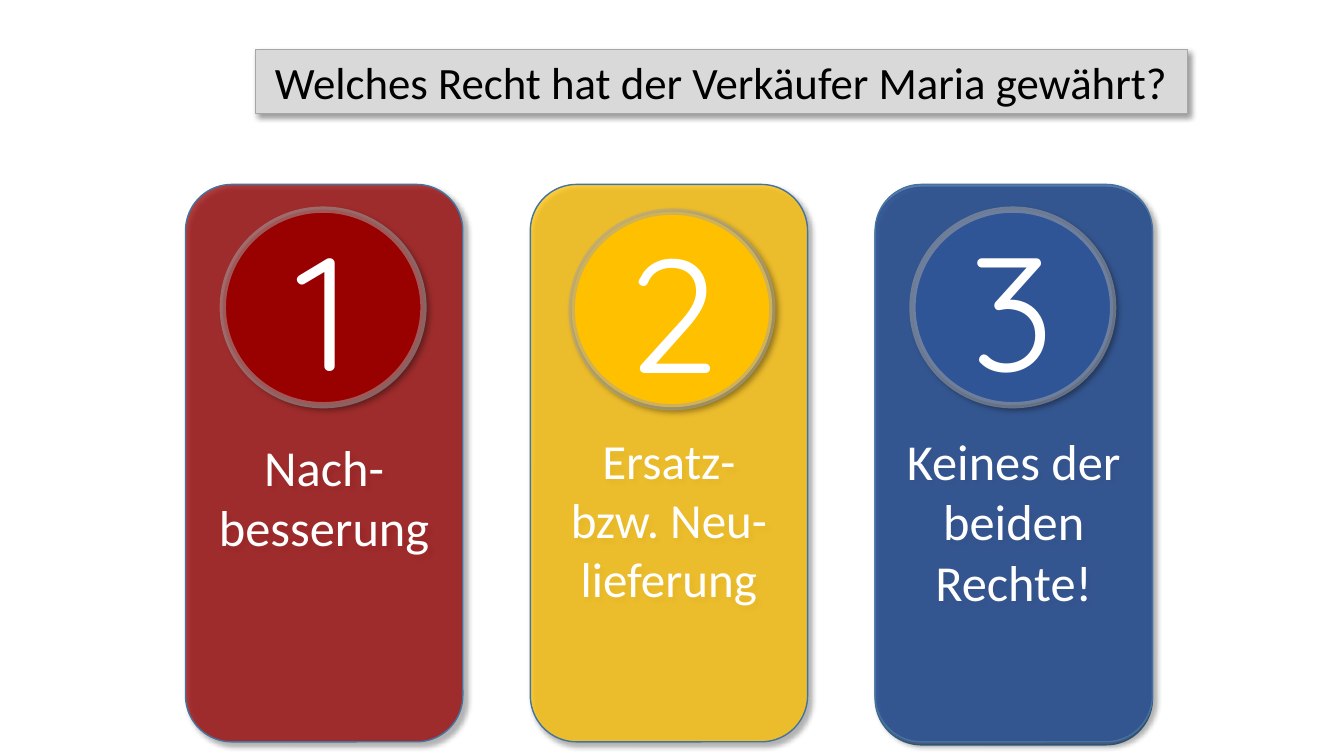
from dataclasses import dataclass

from lxml.etree import SubElement
from pptx import Presentation
from pptx.dml.color import RGBColor
from pptx.enum.shapes import MSO_SHAPE as Shape
from pptx.enum.text import MSO_ANCHOR as Anchor, PP_ALIGN as Align
from pptx.oxml.ns import qn
from pptx.util import Emu, Pt

EMU_PER_PX = 9144


@dataclass(frozen=True)
class Theme:
    red: str = "990000"
    yellow: str = "FFC000"
    blue: str = "2F5597"
    white: str = "FFFFFF"
    black: str = "000000"
    banner: str = "D9D9D9"
    rim: str = "A6A6A6"
    card_edge: str = "43739E"
    body_font: str = "Calibri"
    digit_font: str = "Quicksand"
    title_size: int = 32
    digit_size: int = 115
    card_alpha: int = 75
    rim_alpha: int = 53


THEME = Theme()


@dataclass(frozen=True)
class Answer:
    text: str
    color: str
    size: int
    text_inset: int
    badge_left: int
    badge_top: int


ANSWERS = [
    Answer("Nach-besserung", THEME.red, 36, 236, 221, 208),
    Answer("Ersatz- bzw. Neu-lieferung", THEME.yellow, 35, 231, 567, 210),
    Answer("Keines der beiden Rechte!", THEME.blue, 36, 230, 905, 208),
]
CARD_LEFT, CARD_TOP, CARD_WIDTH, CARD_HEIGHT, CARD_STEP = 184, 183, 275, 553, 342
BADGE_WIDTH, BADGE_HEIGHT = 199, 194


def px(value):
    return Emu(value * EMU_PER_PX)


def set_alpha(parent, percent):
    color = next(parent.iter(qn("a:srgbClr")))
    SubElement(color, qn("a:alpha")).set("val", str(percent * 1000))


def paint(shape, fill, edge, edge_width, fill_alpha=100, edge_alpha=100):
    shape.fill.solid()
    shape.fill.fore_color.rgb = RGBColor.from_string(fill)
    shape.line.color.rgb = RGBColor.from_string(edge)
    shape.line.width = Pt(edge_width)
    properties = shape.element.spPr
    if fill_alpha < 100:
        set_alpha(properties.find(qn("a:solidFill")), fill_alpha)
    if edge_alpha < 100:
        set_alpha(properties.find(qn("a:ln")), edge_alpha)


def cast_shadow(shape):
    shape.shadow.inherit = False
    effects = shape.element.spPr.find(qn("a:effectLst"))
    shadow = SubElement(effects, qn("a:outerShdw"), blurRad=str(Pt(4)),
                        dist=str(Pt(3)), dir="2700000", algn="tl", rotWithShape="0")
    SubElement(shadow, qn("a:srgbClr")).set("val", THEME.black)
    set_alpha(shadow, 40)


def write(shape, text, font, size, color, anchor=Anchor.MIDDLE):
    frame = shape.text_frame
    frame.word_wrap = True
    frame.vertical_anchor = anchor
    para = frame.paragraphs[0]
    para.text = text
    para.alignment = Align.CENTER
    para.font.name = font
    para.font.size = Pt(size)
    para.font.color.rgb = RGBColor.from_string(color)


def add_title(page, text):
    title = page.shapes.title
    title.left, title.top, title.width, title.height = map(px, (253, 49, 925, 64))
    paint(title, THEME.banner, THEME.rim, 0.75)
    cast_shadow(title)
    write(title, text, THEME.body_font, THEME.title_size, THEME.black)


def add_card(page, left, top, color):
    card = page.shapes.add_shape(Shape.ROUNDED_RECTANGLE, px(left), px(top),
                                 px(CARD_WIDTH), px(CARD_HEIGHT))
    card.shadow.inherit = False
    paint(card, color, THEME.card_edge, 1, fill_alpha=THEME.card_alpha)
    return card


def add_answer(page, left, answer):
    card = add_card(page, left, CARD_TOP, answer.color)
    cast_shadow(card)
    card.text_frame.margin_top = px(answer.text_inset)
    write(card, answer.text, THEME.body_font, answer.size, THEME.white, Anchor.TOP)


def add_badge(page, number, answer):
    badge = page.shapes.add_shape(Shape.OVAL, px(answer.badge_left), px(answer.badge_top),
                                  px(BADGE_WIDTH), px(BADGE_HEIGHT))
    paint(badge, answer.color, THEME.rim, 4.5, edge_alpha=THEME.rim_alpha)
    cast_shadow(badge)
    write(badge, str(number), THEME.digit_font, THEME.digit_size, THEME.white)


def main():
    deck = Presentation()
    deck.slide_width, deck.slide_height = px(1333), px(750)
    page = deck.slides.add_slide(deck.slide_layouts[5])
    add_title(page, "Welches Recht hat der Verkäufer Maria gewährt?")
    last_left = CARD_LEFT + CARD_STEP * (len(ANSWERS) - 1)
    add_card(page, last_left, CARD_TOP + 3, THEME.blue)
    for index, answer in enumerate(ANSWERS):
        add_answer(page, CARD_LEFT + CARD_STEP * index, answer)
        add_badge(page, index + 1, answer)
    deck.save("out.pptx")


if __name__ == "__main__":
    main()
